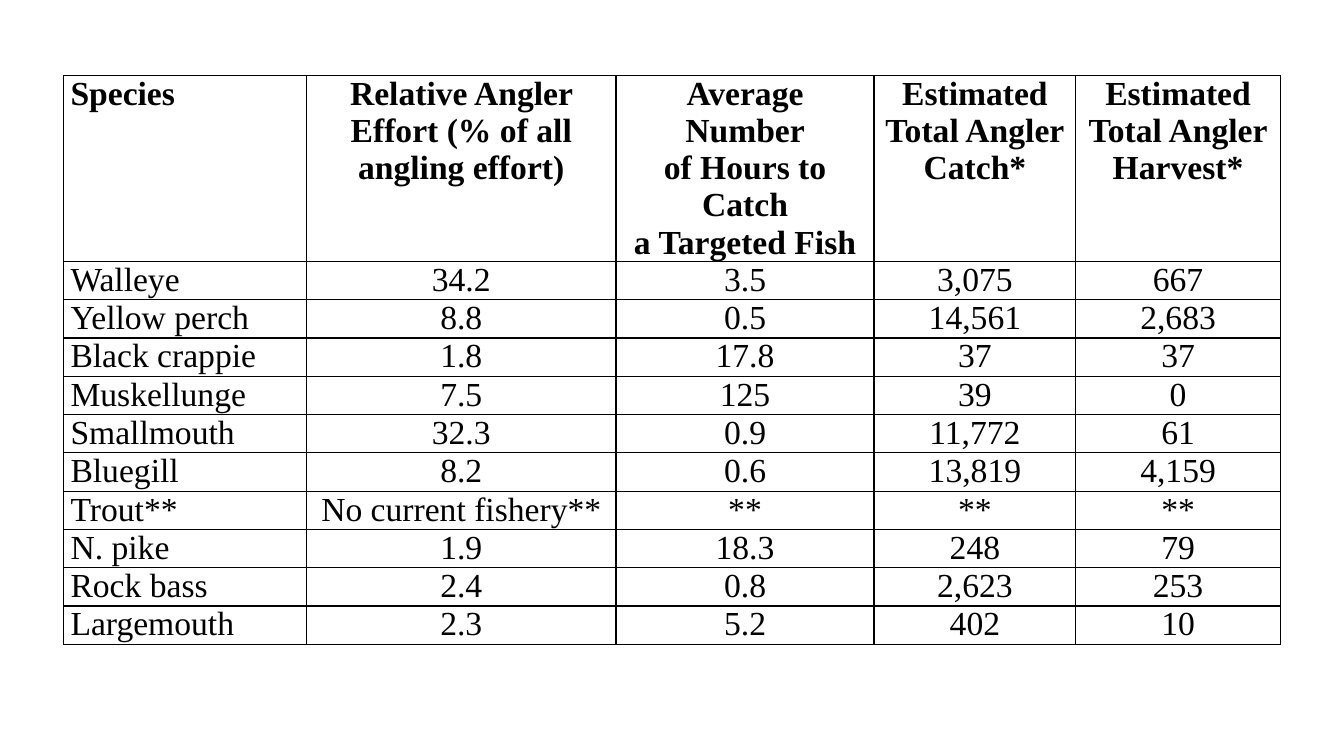
from lxml.etree import SubElement
from pptx import Presentation
from pptx.dml.color import RGBColor
from pptx.enum.text import PP_ALIGN
from pptx.oxml.ns import qn
from pptx.util import Pt

PX = 9144
FONT = "Times New Roman"
INK = "000000"
HEADS = [
    "Species",
    "Relative Angler Effort (% of all angling effort)",
    "Average Number\nof Hours to Catch\na Targeted Fish",
    "Estimated\nTotal Angler\nCatch*",
    "Estimated\nTotal Angler\nHarvest*",
]
FISH = [
    ["Walleye", "34.2", "3.5", "3,075", "667"],
    ["Yellow perch", "8.8", "0.5", "14,561", "2,683"],
    ["Black crappie", "1.8", "17.8", "37", "37"],
    ["Muskellunge", "7.5", "125", "39", "0"],
    ["Smallmouth", "32.3", "0.9", "11,772", "61"],
    ["Bluegill", "8.2", "0.6", "13,819", "4,159"],
    ["Trout**", "No current fishery**", "**", "**", "**"],
    ["N. pike", "1.9", "18.3", "248", "79"],
    ["Rock bass", "2.4", "0.8", "2,623", "253"],
    ["Largemouth", "2.3", "5.2", "402", "10"],
]
WIDTHS = [241, 307, 256, 200, 203]
HEAD_H, ROW_H = 113, 38


def color(code):
    """Turn a hex string into a colour."""
    return RGBColor.from_string(code)


def write(frame, text, size=24, bold=False, align=PP_ALIGN.LEFT, ink=INK):
    """Fill a text frame, one paragraph for each line."""
    frame.text = text
    for para in frame.paragraphs:
        para.alignment = align
        para.font.name = FONT
        para.font.size = Pt(size)
        para.font.bold = bold
        para.font.color.rgb = color(ink)


class Deck:
    """Hold the style and the current slide."""

    def __init__(self, wide, high):
        """Start a deck with one blank slide."""
        self.show = Presentation()
        self.show.slide_width = wide * PX
        self.show.slide_height = high * PX
        self.slide = self.show.slides.add_slide(self.show.slide_layouts[6])

    def border(self, cell, width=1, ink=INK):
        """Draw the four sides of a cell."""
        props = cell._tc.get_or_add_tcPr()
        for side in "LRTB":
            line = SubElement(props, qn(f"a:ln{side}"), w=str(Pt(width)))
            fill = SubElement(line, qn("a:solidFill"))
            SubElement(fill, qn("a:srgbClr"), val=ink)

    def cell(self, cell, text, **form):
        """Format one cell and write its text."""
        cell.margin_left = cell.margin_right = 7 * PX
        cell.margin_top = cell.margin_bottom = 0
        self.border(cell)
        cell.fill.background()
        write(cell.text_frame, text, **form)

    def table(self, left, top, widths, heights, rows):
        """Add a ruled table with a bold first row."""
        box = [left, top, sum(widths), sum(heights)]
        grid = self.slide.shapes.add_table(
            len(rows), len(widths), *(n * PX for n in box)).table
        grid.first_row = grid.horz_banding = False
        for col, width in zip(grid.columns, widths):
            col.width = width * PX
        for row, height in zip(grid.rows, heights):
            row.height = height * PX
        for r, row in enumerate(rows):
            for c, text in enumerate(row):
                align = PP_ALIGN.CENTER if c else PP_ALIGN.LEFT
                self.cell(grid.cell(r, c), text, bold=r == 0, align=align)


def main():
    """Build and save the slide."""
    deck = Deck(1333, 750)
    heights = [HEAD_H] + [ROW_H] * len(FISH)
    deck.table(63, 75, WIDTHS, heights, [HEADS] + FISH)
    deck.show.save("out.pptx")


if __name__ == "__main__":
    main()
